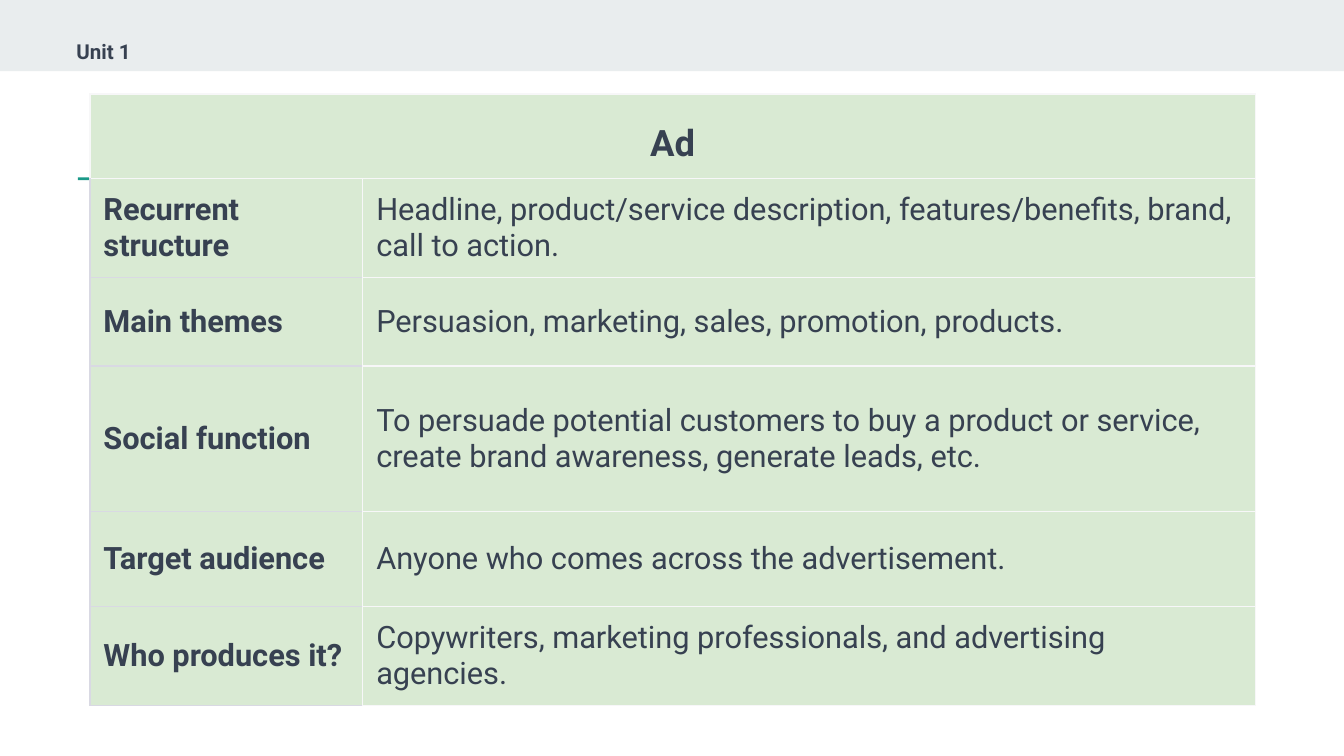
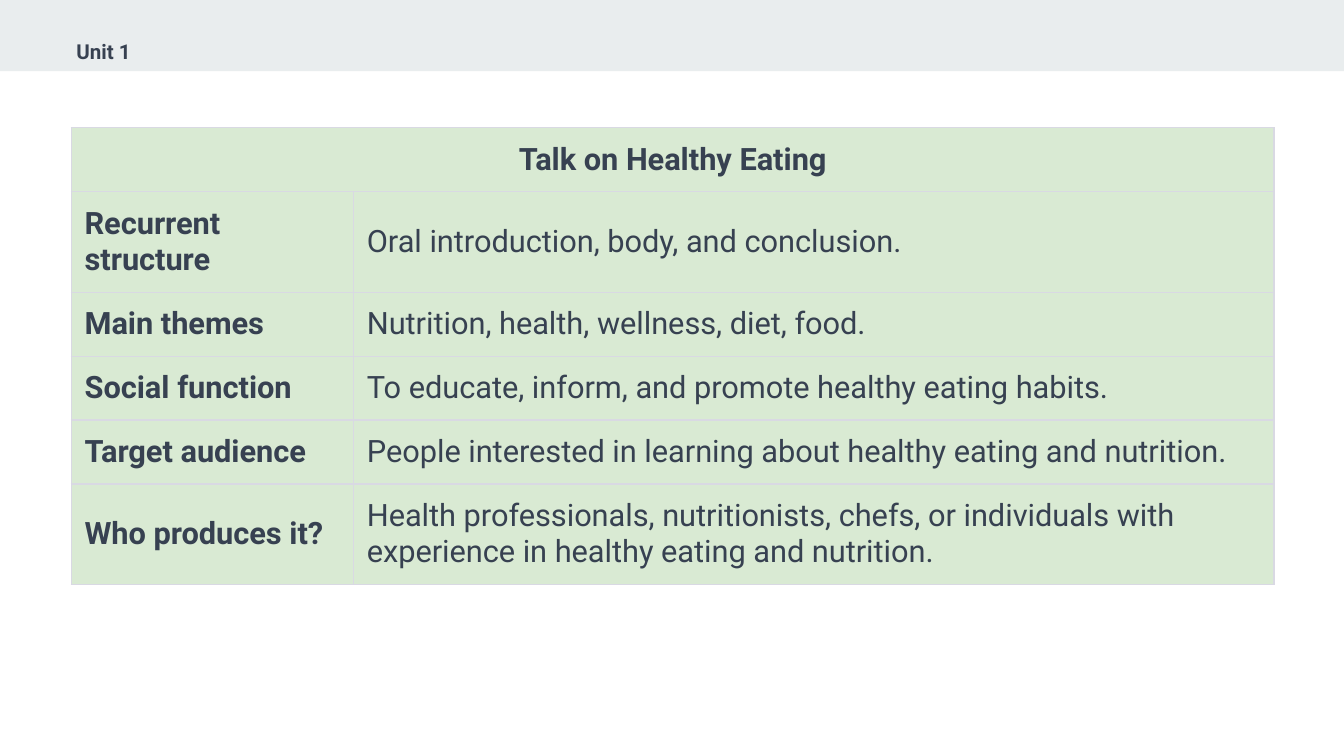
from lxml import etree
from pptx import Presentation
from pptx.dml.color import RGBColor
from pptx.enum import shapes, text
from pptx.oxml.ns import qn
from pptx.util import Inches, Pt

FONT = "Roboto"
INK = RGBColor(0x37, 0x41, 0x51)
BAND = RGBColor(0xE9, 0xED, 0xEE)
TEAL = RGBColor(0x1A, 0x99, 0x88)
ORANGE = RGBColor(0xEB, 0x56, 0x00)
GREEN = RGBColor(0xD9, 0xEA, 0xD3)
PALE = RGBColor(0xF7, 0xF7, 0xF8)
LILAC = RGBColor(0xD9, 0xD9, 0xE3)

UNIT = "Unit 1"
BARS = [
    (0, 0, 10, 0.53, BAND),
    (1.32, 1.32, 0.4, 0.02, ORANGE),
    (0.58, 1.32, 0.74, 0.02, TEAL),
]
LABELS = ["Recurrent structure", "Main themes", "Social function",
          "Target audience", "Who produces it?"]
GENRES = [
    {
        "title": "Ad", "title_size": 19.5, "at": (0.67, 0.7, 8.67, 4.58),
        "cols": [2.03, 6.64], "rows": [0.63, 0.68, 0.66, 1.08, 0.71, 0.71],
        "border": PALE,
        "answers": [
            "Headline, product/service description, features/benefits, brand, call to action.",
            "Persuasion, marketing, sales, promotion, products.",
            "To persuade potential customers to buy a product or service, "
            "create brand awareness, generate leads, etc.",
            "Anyone who comes across the advertisement.",
            "Copywriters, marketing professionals, and advertising agencies.",
        ],
    },
    {
        "title": "Talk on Healthy Eating", "title_size": 16.5, "at": (0.53, 0.95, 8.95, 3.4),
        "cols": [2.1, 6.85], "rows": [0.35, 0.59, 0.34, 0.34, 0.34, 0.59],
        "border": LILAC,
        "answers": [
            "Oral introduction, body, and conclusion.",
            "Nutrition, health, wellness, diet, food.",
            "To educate, inform, and promote healthy eating habits.",
            "People interested in learning about healthy eating and nutrition.",
            "Health professionals, nutritionists, chefs, or individuals with "
            "experience in healthy eating and nutrition.",
        ],
    },
]


def write(p, words, size, bold):
    p.text = words
    p.font.name = FONT
    p.font.size = Pt(size)
    p.font.bold = bold
    p.font.color.rgb = INK


def add_frame(s):
    for x, y, w, h, color in BARS:
        sp = s.shapes.add_shape(shapes.MSO_SHAPE.RECTANGLE,
                                Inches(x), Inches(y), Inches(w), Inches(h))
        sp.shadow.inherit = False
        sp.fill.solid()
        sp.fill.fore_color.rgb = color
        sp.line.fill.background()


def add_unit(s):
    tf = s.shapes.add_textbox(Inches(0.47), Inches(0.24), Inches(0.61), Inches(0.29)).text_frame
    tf.word_wrap = False
    tf.auto_size = text.MSO_AUTO_SIZE.SHAPE_TO_FIT_TEXT
    write(tf.paragraphs[0], UNIT, 11, True)


def style_cell(cell, borders):
    tc_pr = cell._tc.get_or_add_tcPr()
    for side, color in zip("LRTB", borders):
        ln = etree.SubElement(tc_pr, qn(f"a:ln{side}"), w=str(Pt(0.75)))
        fill = etree.SubElement(ln, qn("a:solidFill"))
        etree.SubElement(fill, qn("a:srgbClr"), val=str(color))
    cell.fill.solid()
    cell.fill.fore_color.rgb = GREEN
    cell.margin_left = cell.margin_right = Inches(0.1)
    cell.margin_top = cell.margin_bottom = Inches(0.1)


def add_genre_table(s, genre):
    cols, heights, edge = genre["cols"], genre["rows"], genre["border"]
    frame = s.shapes.add_table(len(heights), len(cols), *map(Inches, genre["at"]))
    table = frame.table
    table.first_row = table.horz_banding = False
    for column, width in zip(table.columns, cols):
        column.width = Inches(width)
    for row, height in zip(table.rows, heights):
        row.height = Inches(height)
    frame.height = Inches(genre["at"][3])
    table.cell(0, 0).merge(table.cell(0, 1))

    rows = [(genre["title"], "")] + list(zip(LABELS, genre["answers"]))
    for i, row in enumerate(rows):
        for j, words in enumerate(row):
            cell = table.cell(i, j)
            is_label = i > 0 and j == 0
            top = LILAC if is_label and i > 1 else edge
            style_cell(cell, (LILAC, edge, top, LILAC) if is_label else [edge] * 4)
            if cell.is_spanned:
                continue
            cell.vertical_anchor = text.MSO_ANCHOR.MIDDLE if i else text.MSO_ANCHOR.BOTTOM
            p = cell.text_frame.paragraphs[0]
            p.space_before = Pt(2)
            p.alignment = text.PP_ALIGN.LEFT if i else text.PP_ALIGN.CENTER
            write(p, words, 16.5 if i else genre["title_size"], j == 0)


def main():
    prs = Presentation()
    prs.slide_width = Inches(10)
    prs.slide_height = prs.slide_width * 9 // 16
    for genre in GENRES:
        s = prs.slides.add_slide(prs.slide_layouts[6])
        add_frame(s)
        add_genre_table(s, genre)
        add_unit(s)
    prs.save("out.pptx")


if __name__ == "__main__":
    main()
